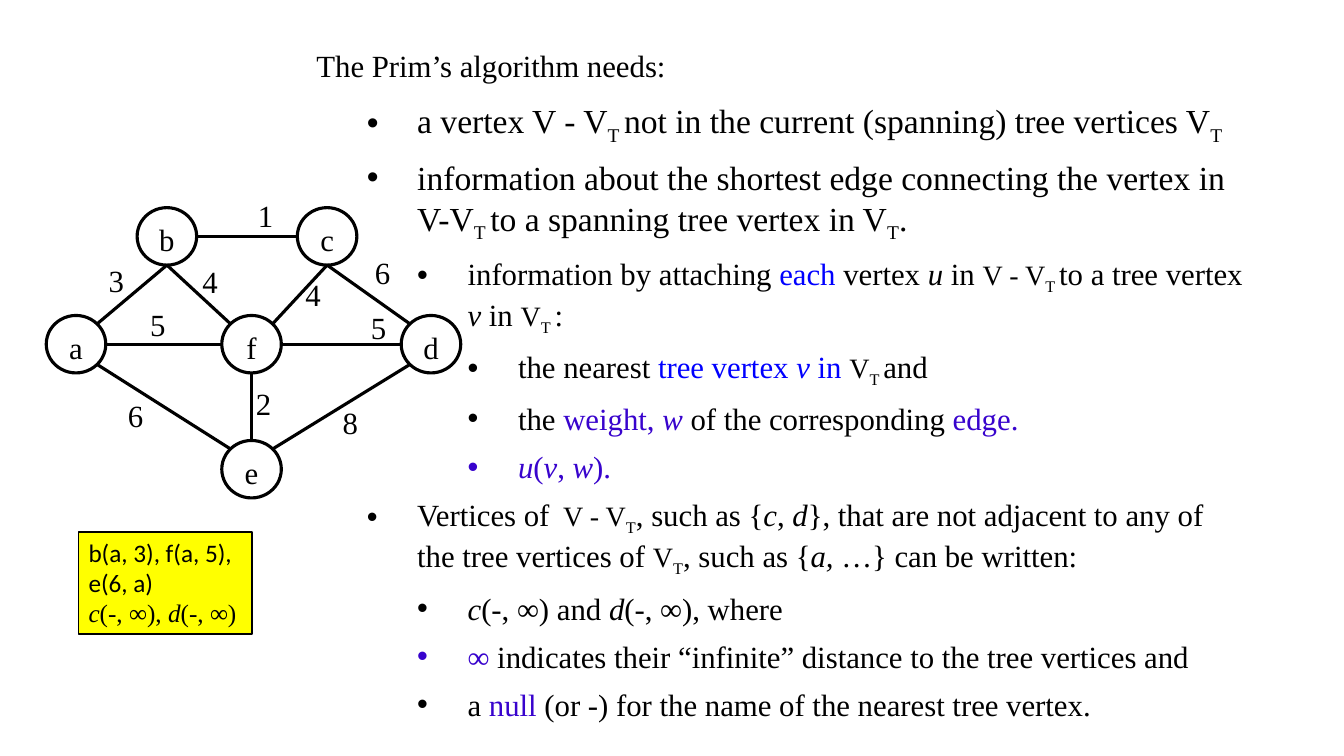
from pptx import Presentation
from pptx.dml.color import RGBColor
from pptx.enum.shapes import MSO_CONNECTOR, MSO_SHAPE
from pptx.enum.text import MSO_ANCHOR, MSO_AUTO_SIZE, PP_ALIGN
from pptx.oxml.ns import qn
from pptx.util import Inches, Pt
from lxml import etree

LINE, OVAL, RECT = MSO_CONNECTOR.STRAIGHT, MSO_SHAPE.OVAL, MSO_SHAPE.RECTANGLE
LEFT, CENTER, TOP = PP_ALIGN.LEFT, PP_ALIGN.CENTER, MSO_ANCHOR.TOP
GROW, FIXED = MSO_AUTO_SIZE.SHAPE_TO_FIT_TEXT, MSO_AUTO_SIZE.NONE

WIDE, HIGH = Inches(13.33), Inches(7.5)
COL, ROW = WIDE / 100, HIGH / 100  # the grid has 100 columns and 100 rows
COLORS = {"black": "000000", "white": "FFFFFF", "blue": "0000FF",
          "violet": "3803CD", "yellow": "FFFF00"}
SERIF, SANS = "Times New Roman", "Calibri"

NODE_W, NODE_H = 4.43, 7.6
NODES = {"b": (12.42, 31.27), "c": (24.34, 31.27), "f": (18.72, 45.53),
         "a": (5.66, 45.53), "d": (32.07, 45.53), "e": (18.72, 62.07)}

# Share of the node's width and height from its centre
DIAG = 0.35
SITES = {"n": (0, -0.5), "s": (0, 0.5), "w": (-0.5, 0), "e": (0.5, 0),
         "nw": (-DIAG, -DIAG), "ne": (DIAG, -DIAG),
         "sw": (-DIAG, DIAG), "se": (DIAG, DIAG)}

# Node and site at each end, then the weight with its column and row
EDGES = [
    ("b", "e", "c", "w", "1", 18.45, 25.33),
    ("a", "e", "f", "w", "5", 10.43, 39.73),
    ("f", "e", "d", "w", "5", 26.86, 40.13),
    ("a", "ne", "b", "s", "3", 7.35, 34),
    ("f", "ne", "c", "s", "4", 21.98, 35.87),
    ("e", "ne", "d", "sw", "8", 24.76, 52.8),
    ("a", "se", "e", "nw", "6", 8.78, 51.87),
    ("e", "n", "f", "s", "2", 18.3, 50.27),
    ("f", "nw", "b", "s", "4", 14.33, 34.13),
    ("d", "nw", "c", "s", "6", 27.16, 32.93),
]

# A run is plain text or (text, flags):
# i italic, b blue, v violet, s small, _ subscript
SUB = ("T ", "s_")
TREE = [("V", "s"), SUB]
REST = [("V - V", "s"), SUB]

# Level, left margin in inches, size, runs
NEEDS = [
    (1, 1, 24, ["a vertex V - V", ("T ", "_"),
                "not in the current (spanning) tree vertices V", ("T", "_")]),
    (1, 1, 24, ["information about the shortest edge connecting the vertex in V-V",
                ("T ", "_"), "to a spanning tree vertex in V", ("T", "_"), "."]),
    (1, 1.5, 22, ["information by attaching ", ("each", "b"), " vertex ", ("u", "i"),
                  " in ", *REST, "to a tree vertex ", ("v", "i"), " in ", *TREE, ":"]),
    (2, 2, 22, ["the nearest ", ("tree vertex ", "b"), ("v", "bi"), (" in ", "b"),
                *TREE, "and"]),
    (2, 2, 22, ["the ", ("weight, ", "v"), ("w", "vi"), " of the corresponding ",
                ("edge.", "v")]),
    (2, 2, 22, [("u", "vi"), ("(", "v"), ("v", "vi"), (", ", "v"), ("w", "vi"),
                (").", "v")]),
    (0, 1, 22, ["Vertices of", ("  V - V", "s"), ("T", "s_"), ", such as {",
                ("c", "i"), ", ", ("d", "i"),
                "}, that are not adjacent to any of the tree vertices of ",
                ("V", "s"), ("T", "s_"), ", such as {", ("a, ", "i"),
                "…} can be written:"]),
    (1, 1.5, 22, [("c", "i"), "(-, ∞) and ", ("d", "i"), "(-, ∞), where"]),
    (1, 1.5, 22, [("∞ ", "v"),
                  "indicates their “infinite” distance to the tree vertices and"]),
    (1, 1.5, 22, ["a ", ("null", "v"),
                  " (or -) for the name of the nearest tree vertex."]),
]


def rgb(name):
    return RGBColor.from_string(COLORS[name])


def place(x, y, w, h):
    return [round(v) for v in (x * COL, y * ROW, w * COL, h * ROW)]


def add_run(para, text, size, font, flags=""):
    run = para.add_run()
    run.text = text
    face = run.font
    face.name, face.italic = font, "i" in flags
    face.size = Pt(20 if "s" in flags else size)
    face.color.rgb = rgb("blue" if "b" in flags else "violet" if "v" in flags else "black")
    if "_" in flags:
        face._element.set("baseline", "-25000")


def add_para(frame, runs, size=22, font=SERIF, align=LEFT, after=0, level=0, margin=None):
    """Fill the frame's first paragraph if it is empty, or append one."""
    first = frame.paragraphs[0]
    para = frame.add_paragraph() if first.runs else first
    para.alignment, para.level, para.space_after = align, level, Pt(after)
    if margin:
        props = para._p.get_or_add_pPr()
        props.set("marL", str(Inches(margin)))
        props.set("indent", str(Inches(-0.5)))
        face = etree.SubElement(props, qn("a:buFont"))
        face.set("typeface", "Arial")
        etree.SubElement(props, qn("a:buChar")).set("char", "•")
    for run in runs:
        text, flags = (run, "") if isinstance(run, str) else run
        add_run(para, text, size, font, flags)


def add_box(slide, area, wrap=True, fit=GROW):
    frame = slide.shapes.add_textbox(*place(*area)).text_frame
    frame.word_wrap, frame.auto_size = wrap, fit
    return frame


def add_form(slide, kind, area, fill, width):
    form = slide.shapes.add_shape(kind, *place(*area))
    form.shadow.inherit = False
    form.fill.solid()
    form.fill.fore_color.rgb = rgb(fill)
    form.line.color.rgb = rgb("black")
    form.line.width = Pt(width)
    form.text_frame.vertical_anchor = TOP
    return form.text_frame


def add_node(slide, name):
    x, y = NODES[name]
    area = x - NODE_W / 2, y - NODE_H / 2, NODE_W, NODE_H
    frame = add_form(slide, OVAL, area, "white", 2.25)
    frame.word_wrap = False
    add_para(frame, [name], align=CENTER)


def find_site(name, side):
    (x, y), (dx, dy) = NODES[name], SITES[side]
    return x + dx * NODE_W, y + dy * NODE_H


def add_edge(slide, start, end):
    line = slide.shapes.add_connector(LINE, *place(*start, *end))
    line.line.color.rgb = rgb("black")
    line.line.width = Pt(2.25)
    etree.SubElement(line._element.spPr, qn("a:effectLst"))


def add_graph(slide):
    for name in NODES:
        add_node(slide, name)
    for head, out, tail, into, weight, x, y in EDGES:
        add_edge(slide, find_site(head, out), find_site(tail, into))
        frame = add_box(slide, (x, y, 2.7, 6.27), wrap=False, fit=FIXED)
        add_para(frame, [weight])


def add_needs(slide):
    frame = add_box(slide, (22.8, 5.47, 70.74, 87.47))
    add_para(frame, ["The Prim’s algorithm needs:"], after=12)
    for level, margin, size, runs in NEEDS:
        add_para(frame, runs, size=size, after=8, level=level, margin=margin)


def add_state(slide):
    frame = add_form(slide, RECT, (5.85, 70.4, 12.9, 13.47), "yellow", 1)
    frame.word_wrap = True
    add_para(frame, ["b(a, 3), f(a, 5), e(6, a)"], size=18, font=SANS)
    add_para(frame, [("c", "i"), "(-, ∞), ", ("d", "i"), "(-, ∞)"], size=18)


def main():
    deck = Presentation()
    deck.slide_width, deck.slide_height = WIDE, HIGH
    slide = deck.slides.add_slide(deck.slide_layouts[6])
    add_needs(slide)
    add_graph(slide)
    add_state(slide)
    deck.save("out.pptx")


if __name__ == "__main__":
    main()
